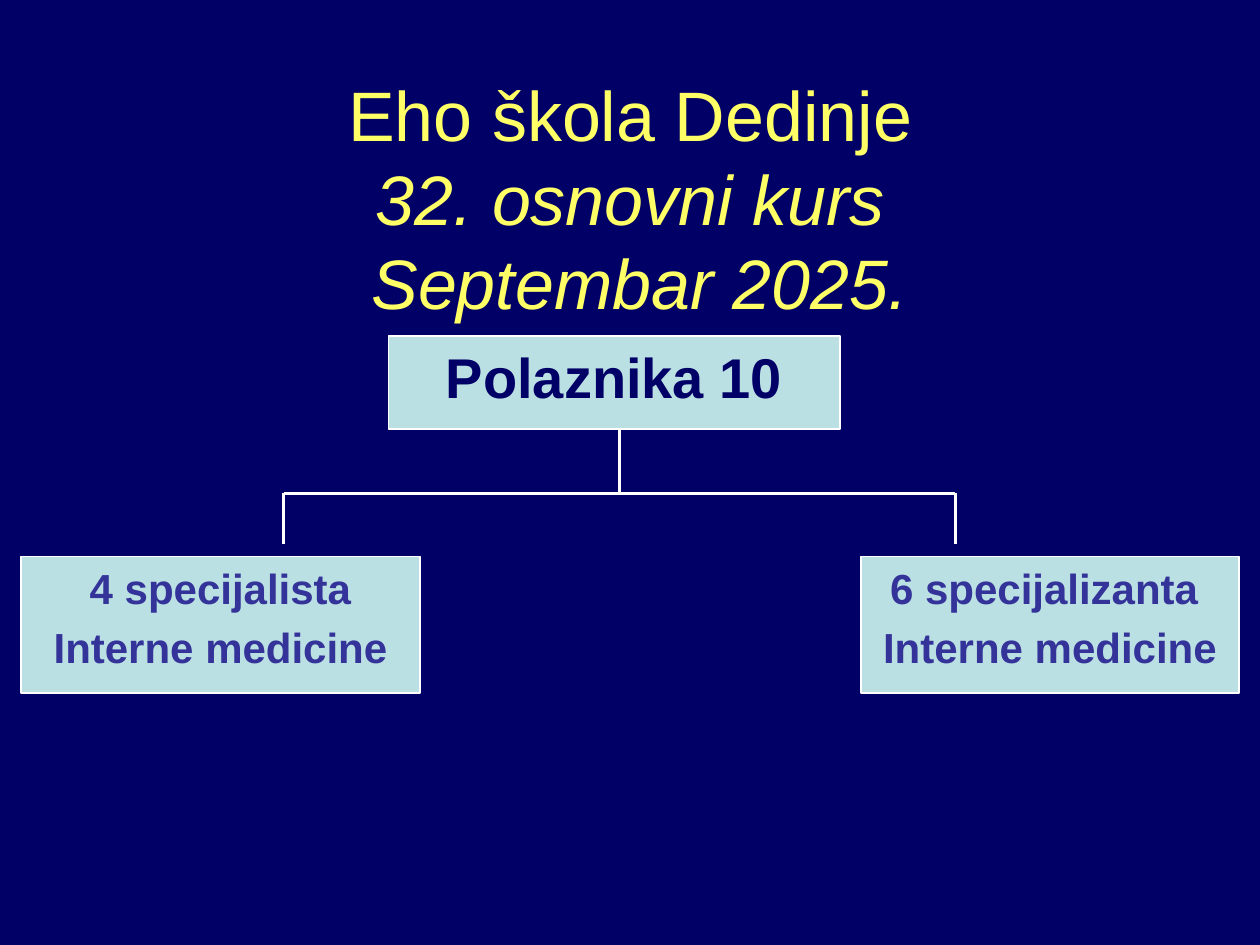
from lxml.etree import SubElement
from pptx import Presentation
from pptx.dml.color import RGBColor
from pptx.enum.shapes import MSO_CONNECTOR, MSO_SHAPE
from pptx.enum.text import MSO_ANCHOR, PP_ALIGN
from pptx.oxml.ns import qn
from pptx.util import Pt

NAVY = RGBColor(0x00, 0x00, 0x66)
INDIGO = RGBColor(0x33, 0x33, 0x99)
PALE_TEAL = RGBColor(0xBB, 0xE0, 0xE3)
YELLOW = RGBColor(0xFF, 0xFF, 0x66)
WHITE = RGBColor(0xFF, 0xFF, 0xFF)
FONT = "Arial"

TITLE_LINES = [
    ("Eho škola Dedinje", False),
    ("32. osnovni kurs", True),
    (" Septembar 2025.", True),
]
TITLE_FRAME = (24, 21.6, 672, 182)

GROUPS = [
    (["Polaznika 10"], (222, 192, 258, 53), 32, NAVY),
    (["4 specijalista", "Interne medicine"], (12, 318, 228, 78), 24, INDIGO),
    (["6 specijalizanta ", "Interne medicine"], (492, 318, 216, 78), 24, INDIGO),
]

TRUNK_X, TRUNK_TOP = 354, 246
BRANCH_Y, BRANCH_BOTTOM = 282, 311
BRANCH_XS = (162, 546)
HANGING = 27


def add_text(paragraph, text, size, color, bold=False, italic=False):
    run = paragraph.add_run()
    run.text = text
    font = run.font
    font.name, font.size = FONT, Pt(size)
    font.bold, font.italic = bold, italic
    font.color.rgb = color


def add_group(slide, lines, frame, size, color):
    group = slide.shapes.add_shape(MSO_SHAPE.RECTANGLE, *map(Pt, frame))
    group.shadow.inherit = False
    group.fill.solid()
    group.fill.fore_color.rgb = PALE_TEAL
    group.line.color.rgb = WHITE
    group.line.width = Pt(1)
    body = group.text_frame
    body.word_wrap = True
    body.vertical_anchor = MSO_ANCHOR.TOP
    for index, line in enumerate(lines):
        paragraph = body.add_paragraph() if index else body.paragraphs[0]
        paragraph.alignment = PP_ALIGN.CENTER
        paragraph.space_before = Pt(size * 0.2)
        properties = paragraph._p.get_or_add_pPr()
        properties.set("marL", str(Pt(HANGING)))
        properties.set("indent", str(-Pt(HANGING)))
        add_text(paragraph, line, size, color, bold=True)


def add_branch(slide, *ends):
    branch = slide.shapes.add_connector(MSO_CONNECTOR.STRAIGHT, *map(Pt, ends))
    branch.line.color.rgb = WHITE
    branch.line.width = Pt(2.25)
    SubElement(branch._element.spPr, qn("a:effectLst"))


def add_title(slide):
    title = slide.shapes.add_textbox(*map(Pt, TITLE_FRAME)).text_frame
    title.word_wrap = True
    title.vertical_anchor = MSO_ANCHOR.MIDDLE
    paragraph = title.paragraphs[0]
    paragraph.alignment = PP_ALIGN.CENTER
    for index, (line, italic) in enumerate(TITLE_LINES):
        if index:
            paragraph.add_line_break()
        add_text(paragraph, line, 40, YELLOW, italic=italic)
    for line_break in paragraph._p.findall(qn("a:br")):
        SubElement(line_break, qn("a:rPr")).set("sz", "4000")


def main():
    deck = Presentation()
    deck.slide_width, deck.slide_height = Pt(720), Pt(540)
    slide = deck.slides.add_slide(deck.slide_layouts[6])
    slide.background.fill.solid()
    slide.background.fill.fore_color.rgb = NAVY

    for group in GROUPS:
        add_group(slide, *group)
    add_branch(slide, TRUNK_X, TRUNK_TOP, TRUNK_X, BRANCH_Y)
    add_branch(slide, BRANCH_XS[0], BRANCH_Y, BRANCH_XS[1], BRANCH_Y)
    for x in BRANCH_XS:
        add_branch(slide, x, BRANCH_Y, x, BRANCH_BOTTOM)
    add_title(slide)
    deck.save("out.pptx")


if __name__ == "__main__":
    main()
